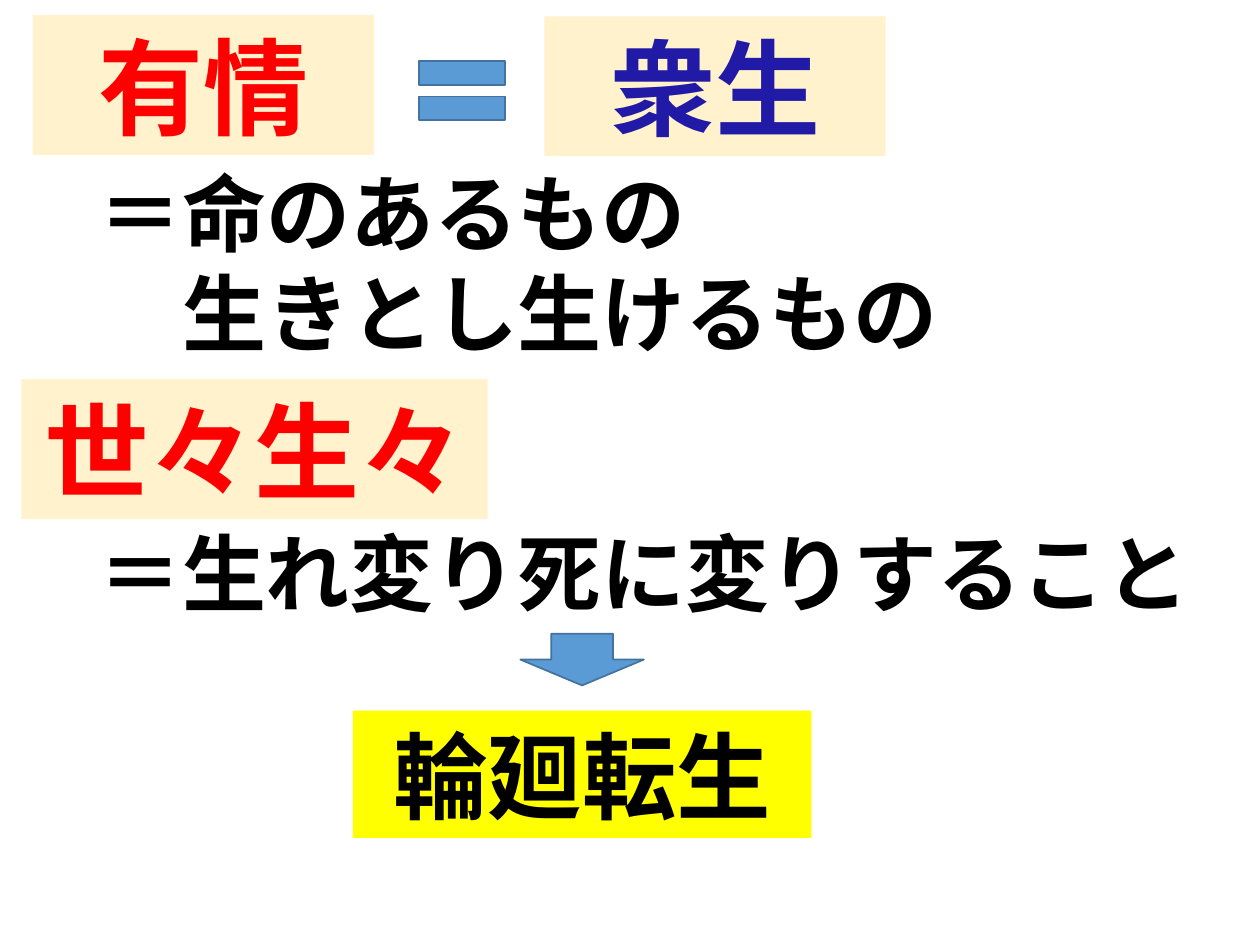
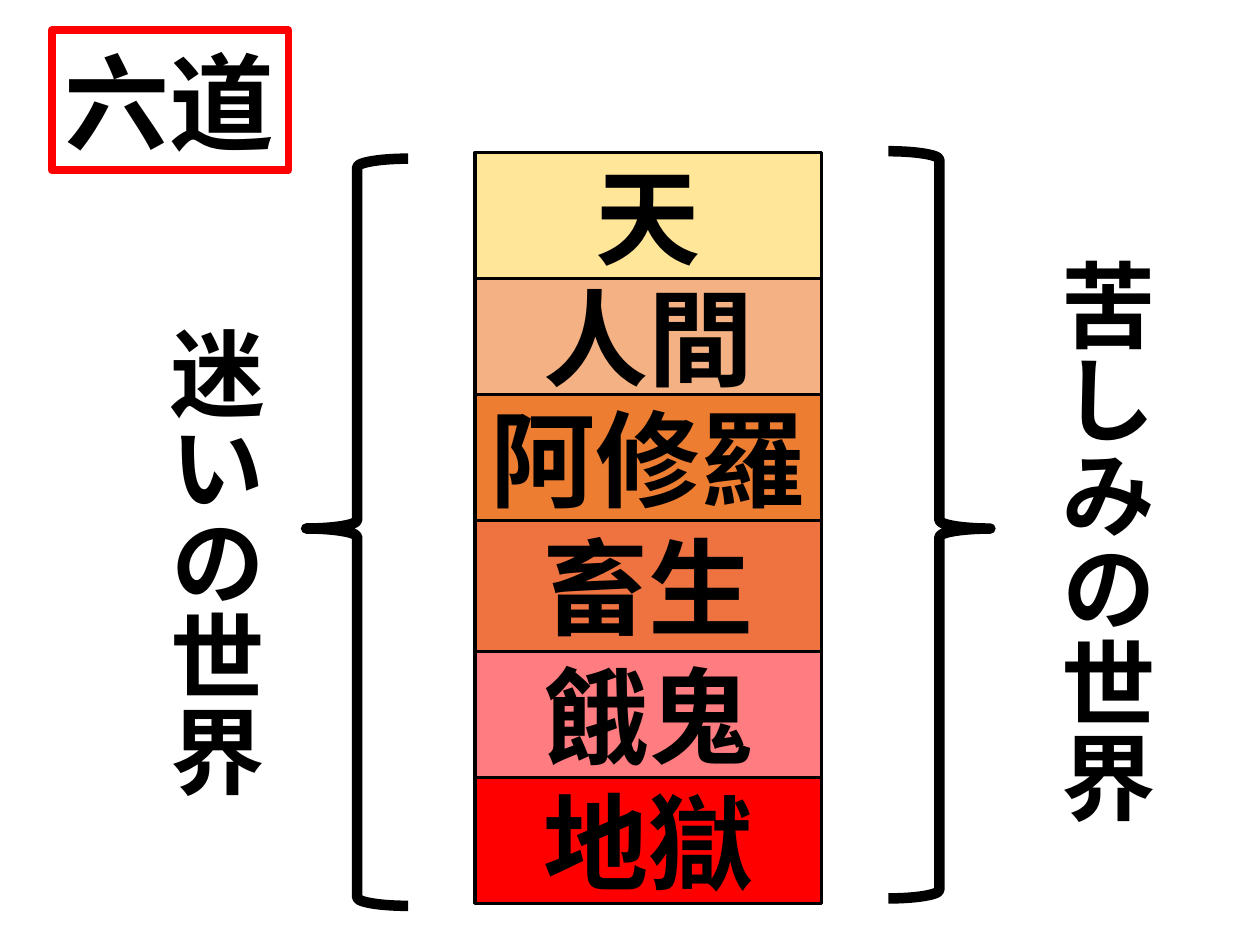
import dataclasses
import itertools
import typing

import lxml.etree
import pptx
import pptx.dml.color
import pptx.enum.shapes
import pptx.enum.text
import pptx.oxml.ns
import pptx.util

Inches = pptx.util.Inches
Shape = pptx.enum.shapes.MSO_SHAPE
Align = pptx.enum.text.PP_ALIGN
Anchor = pptx.enum.text.MSO_ANCHOR
AutoSize = pptx.enum.text.MSO_AUTO_SIZE

FONT = "Noto Sans CJK JP"
BLACK, RED, NAVY = "000000", "FF0000", "211AA6"
CREAM, YELLOW = "FFF2CC", "FFFF00"
SIGN_BLUE, SIGN_EDGE = "5B9BD5", "43739E"
FIT = {"auto_size": AutoSize.SHAPE_TO_FIT_TEXT, "word_wrap": True}
FIT_UNWRAPPED = {**FIT, "word_wrap": False}
MIDDLE = {"vertical_anchor": Anchor.MIDDLE, "word_wrap": True}


@dataclasses.dataclass(frozen=True)
class Wording:
    lines: tuple[str, ...]
    size: int
    color: str = BLACK
    align: typing.Optional[Align] = Align.CENTER
    frame: dict = dataclasses.field(default_factory=lambda: FIT)
    vertical: bool = False
    later_indent: int = 0


@dataclasses.dataclass(frozen=True)
class Item:
    left: float
    top: float
    width: float
    height: float
    wording: typing.Optional[Wording] = None
    outline: typing.Optional[Shape] = None
    fill: typing.Optional[str] = None
    edge: typing.Optional[tuple[str, float]] = None
    rotation: int = 0
    adjustments: tuple[float, ...] = ()


def rgb(color: str) -> pptx.dml.color.RGBColor:
    return pptx.dml.color.RGBColor.from_string(color)


def apply(target: typing.Any, values: dict) -> None:
    for key, value in values.items():
        setattr(target, key, value)


def write(frame: typing.Any, wording: Wording) -> None:
    apply(frame, wording.frame)
    if wording.vertical:
        frame._txBody.bodyPr.set("vert", "eaVert")
    for number, line in enumerate(wording.lines):
        paragraph = frame.add_paragraph() if number else frame.paragraphs[0]
        paragraph.alignment = wording.align
        if number and wording.later_indent:
            indent = pptx.util.Pt(wording.later_indent)
            paragraph._p.get_or_add_pPr().set("marL", str(indent))
        run = paragraph.add_run()
        run.text = line
        apply(run.font, {"name": FONT, "size": pptx.util.Pt(wording.size), "bold": True})
        run.font.color.rgb = rgb(wording.color)
        east_asian = lxml.etree.SubElement(run.font._element, pptx.oxml.ns.qn("a:ea"))
        east_asian.set("typeface", FONT)


def draw(slide: typing.Any, item: Item) -> None:
    area = [Inches(n) for n in (item.left, item.top, item.width, item.height)]
    if item.outline is None:
        shape = slide.shapes.add_textbox(*area)
    else:
        shape = slide.shapes.add_shape(item.outline, *area)
        shape.shadow.inherit = False
        shape.rotation = item.rotation
        for number, value in enumerate(item.adjustments):
            shape.adjustments[number] = value
        if item.fill:
            shape.fill.solid()
            shape.fill.fore_color.rgb = rgb(item.fill)
        else:
            shape.fill.background()
        if item.edge:
            color, width = item.edge
            shape.line.color.rgb = rgb(color)
            shape.line.width = pptx.util.Pt(width)
        else:
            shape.line.fill.background()
    if item.wording:
        write(shape.text_frame, item.wording)


def term(left: float, top: float, width: float, text: str, color: str) -> Item:
    return Item(left, top, width, 1.11, Wording((text,), 60, color), Shape.RECTANGLE, CREAM)


def meaning(top: float, width: float, height: float, *lines: str) -> Item:
    wording = Wording(lines, 48, align=None, later_indent=48)
    return Item(0.68, top, width, height, wording)


def sign(left: float, top: float, width: float, height: float, outline: Shape) -> Item:
    return Item(left, top, width, height, outline=outline, fill=SIGN_BLUE, edge=(SIGN_EDGE, 1))


def brace(left: float, top: float, rotation: int) -> Item:
    return Item(left, top, 0.81, 5.93, outline=Shape.LEFT_BRACE, edge=(BLACK, 6),
                rotation=rotation, adjustments=(0.083, 0.495))


def world(left: float, top: float, height: float, text: str) -> Item:
    wording = Wording((text,), 54, align=None, frame=FIT_UNWRAPPED, vertical=True)
    return Item(left, top, 1.11, height, wording)


def realms() -> list[Item]:
    levels = (
        ("天", "FFE699", 1.0),
        ("人間", "F4B183", 0.92),
        ("阿修羅", "ED7D31", 1.0),
        ("畜生", "EF7341", 1.04),
        ("餓鬼", "FF7C80", 1.0),
        ("地獄", RED, 1.0),
    )
    tops = itertools.accumulate((height for _, _, height in levels), initial=1.21)
    return [
        Item(3.77, top, 2.75, height, Wording((name,), 60, frame=MIDDLE),
             Shape.RECTANGLE, fill, (BLACK, 2))
        for (name, fill, height), top in zip(levels, tops)
    ]


def main() -> None:
    rebirth = [
        term(0.17, 3.01, 3.7, "世々生々", RED),
        term(0.26, 0.12, 2.71, "有情", RED),
        meaning(1.23, 7.31, 1.72, "＝命のあるもの", "生きとし生けるもの"),
        meaning(4.09, 9.1, 0.91, "＝生れ変り死に変りすること"),
        Item(2.8, 5.64, 3.64, 1.01, Wording(("輪廻転生",), 54), Shape.RECTANGLE, YELLOW),
        sign(4.13, 5.03, 0.98, 0.41, Shape.DOWN_ARROW),
        sign(3.2, 0.32, 0.93, 0.8, Shape.MATH_EQUAL),
        term(4.32, 0.13, 2.71, "衆生", NAVY),
    ]
    six_paths = [
        Item(0.41, 0.24, 1.88, 1.11,
             Wording(("六道",), 60, align=Align.LEFT, frame=FIT_UNWRAPPED),
             Shape.RECTANGLE, edge=(RED, 4.5)),
        *realms(),
        brace(2.43, 1.26, 0),
        world(8.16, 1.95, 4.56, "苦しみの世界"),
        brace(7.05, 1.2, 180),
        world(1.09, 2.49, 3.82, "迷いの世界"),
    ]
    deck = pptx.Presentation()
    apply(deck, {"slide_width": Inches(10), "slide_height": Inches(7.5)})
    for items in (rebirth, six_paths):
        slide = deck.slides.add_slide(deck.slide_layouts[6])
        for item in items:
            draw(slide, item)
    deck.save("out.pptx")


if __name__ == "__main__":
    main()
